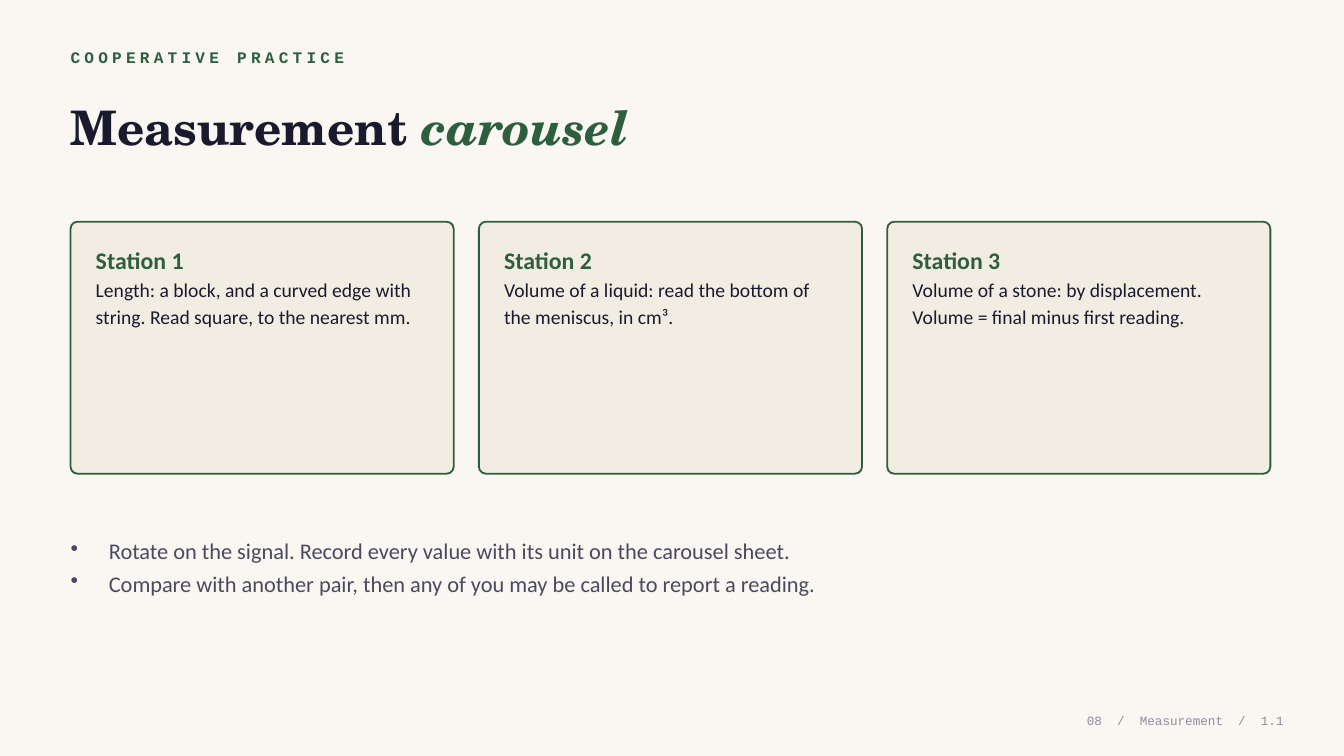
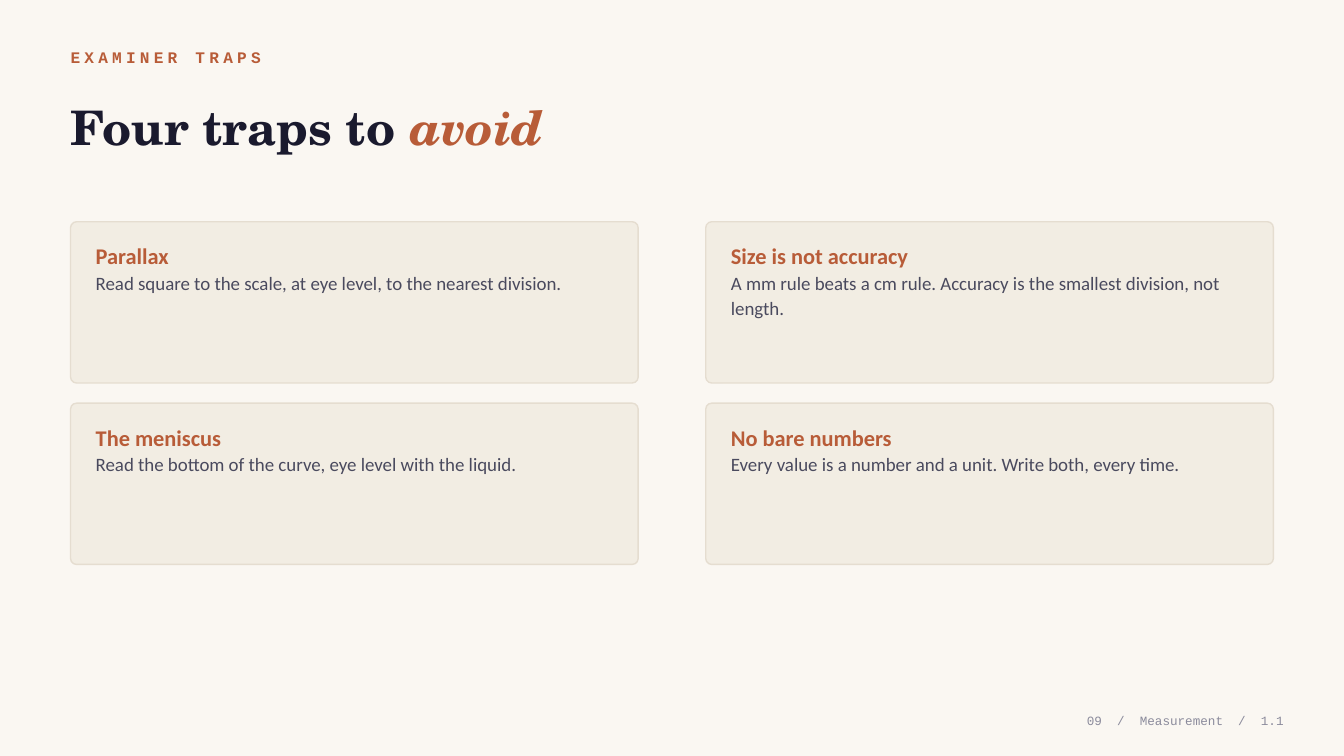
from lxml.etree import SubElement
from pptx import Presentation
from pptx.dml.color import RGBColor
from pptx.enum.shapes import MSO_SHAPE
from pptx.enum.text import MSO_ANCHOR, PP_ALIGN
from pptx.oxml.ns import qn
from pptx.util import Inches, Pt

rgb = RGBColor.from_string
PAPER, PANEL, PANEL_EDGE = "FAF7F2", "F2EDE3", "E5DDD0"
INK, BODY, MUTED = "1A1A2E", "4A4A5E", "8B8B9C"
GREEN, RUST = "2D5F3F", "B85C38"
SANS, SERIF, MONO = "Calibri", "TeX Gyre Schola", "Courier New"
LEFT, TOP, WIDTH = 0.7, 2.2, 11.93
CARD_PAD = 0.25
BULLET_INDENT = Inches(0.38)


def add_paragraphs(s, x, y, w, h, count=1, anchor=MSO_ANCHOR.MIDDLE, line_spacing=None):
    """Add a text box without margins and return its empty paragraphs."""
    tf = s.shapes.add_textbox(Inches(x), Inches(y), Inches(w), Inches(h)).text_frame
    tf.word_wrap = True
    tf.vertical_anchor = anchor
    tf.margin_left = tf.margin_right = tf.margin_top = tf.margin_bottom = 0
    for _ in range(count - 1):
        tf.add_paragraph()
    for p in tf.paragraphs:
        p.line_spacing = line_spacing
    return tf.paragraphs


def add_run(p, text, size, color, font=SANS, bold=False, italic=False, tracking=None):
    r = p.add_run()
    r.text = text
    r.font.size = Pt(size)
    r.font.color.rgb = rgb(color)
    r.font.name = font
    r.font.bold = bold
    r.font.italic = italic
    if tracking:
        r.font._element.set("spc", str(tracking * 100))


slides = [
    {
        "number": "08", "accent": GREEN,
        "eyebrow": "COOPERATIVE PRACTICE", "title": "Measurement ", "emphasis": "carousel",
        "columns": 3, "card": (3.8, 2.5), "gaps": (0.25, 0), "radius": 0.028,
        "edge": GREEN, "edge_width": 1.3, "pad_top": 0.2, "line_spacing": 1.15,
        "head_size": 17, "text_size": 14, "text_color": INK,
        "cards": [
            ("Station 1", "Length: a block, and a curved edge with string. Read square, to the nearest mm."),
            ("Station 2", "Volume of a liquid: read the bottom of the meniscus, in cm³."),
            ("Station 3", "Volume of a stone: by displacement. Volume = final minus first reading."),
        ],
        "bullets": [
            "Rotate on the signal. Record every value with its unit on the carousel sheet.",
            "Compare with another pair, then any of you may be called to report a reading.",
        ],
    },
    {
        "number": "09", "accent": RUST,
        "eyebrow": "EXAMINER TRAPS", "title": "Four traps to ", "emphasis": "avoid",
        "columns": 2, "card": (5.63, 1.6), "gaps": (0.67, 0.2), "radius": 0.037,
        "edge": PANEL_EDGE, "edge_width": 1, "pad_top": 0.18, "line_spacing": 1.1,
        "head_size": 16, "text_size": 13.5, "text_color": BODY,
        "cards": [
            ("Parallax", "Read square to the scale, at eye level, to the nearest division."),
            ("Size is not accuracy", "A mm rule beats a cm rule. Accuracy is the smallest division, not length."),
            ("The meniscus", "Read the bottom of the curve, eye level with the liquid."),
            ("No bare numbers", "Every value is a number and a unit. Write both, every time."),
        ],
        "bullets": [],
    },
]

prs = Presentation()
prs.slide_width = Inches(13.33)
prs.slide_height = Inches(7.5)

for content in slides:
    s = prs.slides.add_slide(prs.slide_layouts[6])
    s.background.fill.solid()
    s.background.fill.fore_color.rgb = rgb(PAPER)
    accent = content["accent"]

    # Heading
    p = add_paragraphs(s, LEFT, 0.42, WIDTH, 0.3)[0]
    add_run(p, content["eyebrow"], 11.5, accent, font=MONO, bold=True, tracking=3)
    p = add_paragraphs(s, LEFT, 0.78, WIDTH, 0.95)[0]
    add_run(p, content["title"], 34, INK, font=SERIF, bold=True)
    add_run(p, content["emphasis"], 34, accent, font=SERIF, bold=True, italic=True)

    # Card grid
    card_w, card_h = content["card"]
    gap_x, gap_y = content["gaps"]
    pad_top = content["pad_top"]
    for i, (head, text) in enumerate(content["cards"]):
        row, col = divmod(i, content["columns"])
        x = LEFT + col * (card_w + gap_x)
        y = TOP + row * (card_h + gap_y)
        sp = s.shapes.add_shape(MSO_SHAPE.ROUNDED_RECTANGLE,
                                Inches(x), Inches(y), Inches(card_w), Inches(card_h))
        sp.shadow.inherit = False
        sp.adjustments[0] = content["radius"]
        sp.fill.solid()
        sp.fill.fore_color.rgb = rgb(PANEL)
        sp.line.color.rgb = rgb(content["edge"])
        sp.line.width = Pt(content["edge_width"])
        head_p, text_p = add_paragraphs(
            s, x + CARD_PAD, y + pad_top, card_w - 2 * CARD_PAD, card_h - 2 * pad_top,
            count=2, anchor=MSO_ANCHOR.TOP, line_spacing=content["line_spacing"])
        add_run(head_p, head, content["head_size"], accent, bold=True)
        add_run(text_p, text, content["text_size"], content["text_color"])

    # Bullets
    bullets = content["bullets"]
    if bullets:
        paragraphs = add_paragraphs(s, LEFT, 5.05, WIDTH, 1.1,
                                    count=len(bullets), line_spacing=1.2)
        for p, text in zip(paragraphs, bullets):
            pPr = p._p.get_or_add_pPr()
            pPr.set("marL", str(BULLET_INDENT))
            pPr.set("indent", str(-BULLET_INDENT))
            SubElement(pPr, qn("a:buChar")).set("char", "•")
            add_run(p, text, 16, BODY)

    # Footer
    p = add_paragraphs(s, 9.43, 7, 3.3, 0.3)[0]
    p.alignment = PP_ALIGN.RIGHT
    add_run(p, f"{content['number']}  /  Measurement  /  1.1", 9, MUTED, font=MONO)

prs.save("out.pptx")
